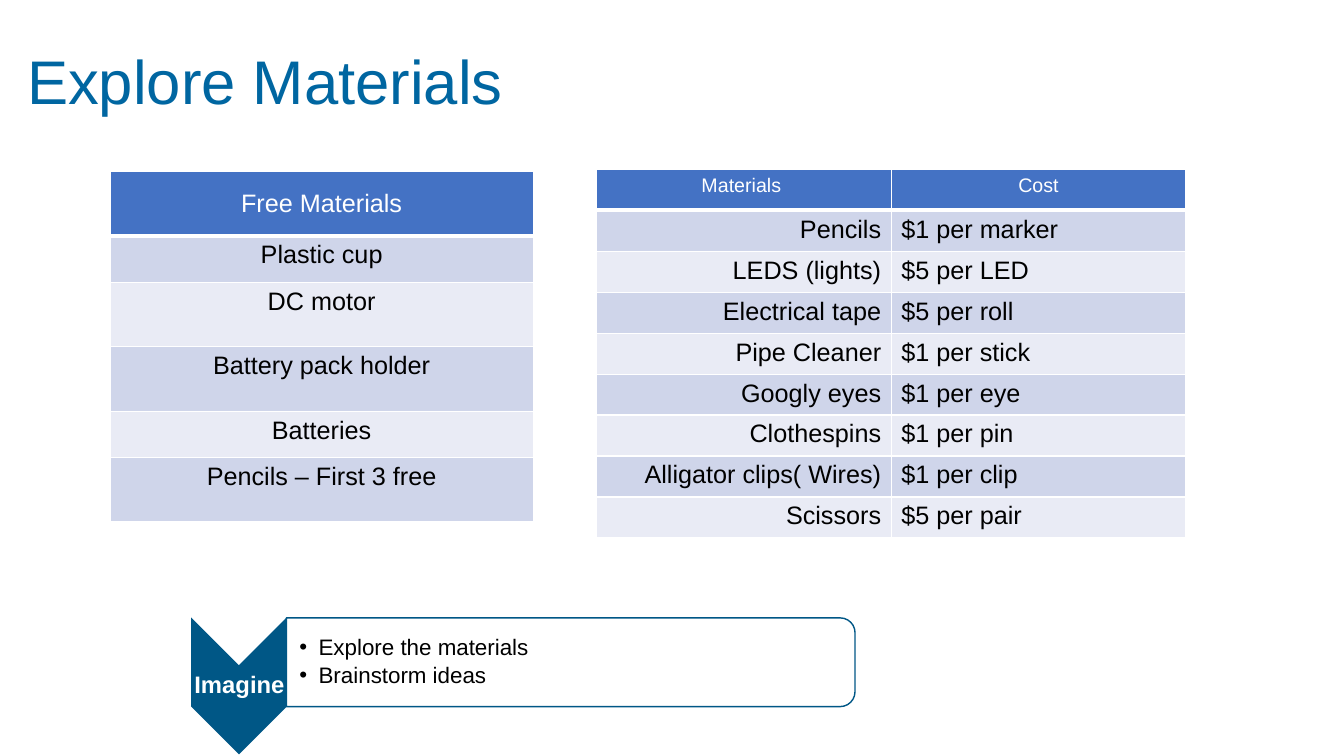
from dataclasses import dataclass

from lxml import etree
from pptx import Presentation
from pptx import util as u
from pptx.dml.color import RGBColor
from pptx.enum import shapes, text
from pptx.oxml import ns

FONT = "Arial"
WHITE, BLACK, TITLE_BLUE, STEP_BLUE = "FFFFFF", "000000", "0066A1", "005786"
HEADER_BLUE, BANDS = "4472C4", ("CFD5EA", "E9EBF5")
LEFT, CENTER, RIGHT = text.PP_ALIGN.LEFT, text.PP_ALIGN.CENTER, text.PP_ALIGN.RIGHT
TOP, MIDDLE = text.MSO_ANCHOR.TOP, text.MSO_ANCHOR.MIDDLE


@dataclass
class MaterialTable:
    left: float
    top: float
    column_width: float
    row_heights: list[float]
    rows: list[tuple[str, ...]]
    aligns: tuple
    header_size: int
    header_anchor: text.MSO_ANCHOR


@dataclass
class StepShape:
    kind: shapes.MSO_SHAPE
    box: tuple[float, float, float, float]
    fill: str
    line: str | None = None
    opacity: int = 100


def color(hex_code: str) -> RGBColor:
    return RGBColor.from_string(hex_code)


def add_xml(parent, tag: str, **attributes: str):
    return etree.SubElement(parent, ns.qn(tag), attributes)


def write(frame, content: str, *, size: int, ink: str = BLACK, bold: bool = False,
          align=LEFT, anchor=TOP, line_spacing: float | None = None,
          space_after: float = 0, bullet: bool = False) -> None:
    """Fill a text frame, one paragraph for each line of content."""
    frame.word_wrap = True
    frame.vertical_anchor = anchor
    frame.text = content
    for paragraph in frame.paragraphs:
        paragraph.alignment = align
        paragraph.space_after = u.Pt(space_after)
        if line_spacing:
            paragraph.line_spacing = line_spacing
        if bullet:
            properties = paragraph._p.get_or_add_pPr()
            indent = u.Inches(0.19)
            properties.set("marL", str(indent))
            properties.set("indent", str(-indent))
            add_xml(properties, "a:buFont", typeface=FONT)
            add_xml(properties, "a:buChar", char="•")
        for run in paragraph.runs:
            run.font.name = FONT
            run.font.size = u.Pt(size)
            run.font.bold = bold
            run.font.color.rgb = color(ink)


def add_text(slide, box: tuple, content: str, *,
             insets: tuple = (0.1, 0.05, 0.1, 0.05), **style) -> None:
    frame = slide.shapes.add_textbox(*map(u.Inches, box)).text_frame
    (frame.margin_left, frame.margin_top,
     frame.margin_right, frame.margin_bottom) = map(u.Inches, insets)
    write(frame, content, anchor=MIDDLE, line_spacing=0.9, **style)


def border_cell(cell, bottom: float) -> None:
    properties = cell._tc.get_or_add_tcPr()
    widths = {"a:lnL": 1, "a:lnR": 1, "a:lnT": 1, "a:lnB": bottom}
    for position, (tag, width) in enumerate(widths.items()):
        edge = etree.Element(ns.qn(tag), w=str(u.Pt(width)))
        add_xml(add_xml(edge, "a:solidFill"), "a:srgbClr", val=WHITE)
        properties.insert(position, edge)


def draw_table(slide, materials: MaterialTable) -> None:
    columns = len(materials.aligns)
    table = slide.shapes.add_table(
        len(materials.rows), columns, u.Inches(materials.left), u.Inches(materials.top),
        u.Inches(materials.column_width * columns),
        u.Inches(sum(materials.row_heights))).table
    for column in table.columns:
        column.width = u.Inches(materials.column_width)
    for row_index, (labels, height) in enumerate(zip(materials.rows, materials.row_heights)):
        table.rows[row_index].height = u.Inches(height)
        header = row_index == 0
        for column_index, label in enumerate(labels):
            cell = table.cell(row_index, column_index)
            cell.fill.solid()
            cell.fill.fore_color.rgb = color(
                HEADER_BLUE if header else BANDS[(row_index - 1) % 2])
            border_cell(cell, bottom=3 if header else 1)
            write(cell.text_frame, label,
                  size=materials.header_size if header else 18,
                  ink=WHITE if header else BLACK,
                  align=CENTER if header else materials.aligns[column_index])
            cell.vertical_anchor = materials.header_anchor if header else TOP


def draw_step_shape(slide, step: StepShape) -> None:
    outline = slide.shapes.add_shape(step.kind, *map(u.Inches, step.box))
    outline.rotation = 90
    outline.shadow.inherit = False
    outline.fill.solid()
    outline.fill.fore_color.rgb = color(step.fill)
    if step.opacity < 100:
        fill_color = outline._element.spPr.find(".//" + ns.qn("a:srgbClr"))
        add_xml(fill_color, "a:alpha", val=str(step.opacity * 1000))
    if step.line:
        outline.line.color.rgb = color(step.line)
        outline.line.width = u.Pt(1)
    else:
        outline.line.fill.background()


TABLES = [
    MaterialTable(
        1.09, 1.7, 4.2, [0.64, 0.46, 0.64, 0.64, 0.46, 0.64],
        [("Free Materials",), ("Plastic cup",), ("DC motor",),
         ("Battery pack holder",), ("Batteries",), ("Pencils – First 3 free",)],
        (CENTER,), 18, MIDDLE),
    MaterialTable(
        5.92, 1.68, 2.92, [3.66 / 9] * 9,
        [("Materials ", "Cost"),
         ("Pencils", "$1 per marker"),
         ("LEDS (lights)", "$5 per LED"),
         ("Electrical tape", "$5 per roll"),
         ("Pipe Cleaner", "$1 per stick"),
         ("Googly eyes", "$1 per eye"),
         ("Clothespins", "$1 per pin"),
         ("Alligator clips( Wires)", "$1 per clip"),
         ("Scissors", "$5 per pair")],
        (RIGHT, LEFT), 14, TOP),
]

STEP_SHAPES = [
    StepShape(shapes.MSO_SHAPE.CHEVRON, (1.69, 6.33, 1.36, 0.95), STEP_BLUE),
    StepShape(shapes.MSO_SHAPE.ROUND_2_SAME_RECTANGLE, (5.22, 3.75, 0.88, 5.64),
              WHITE, line=STEP_BLUE, opacity=90),
]


def main() -> None:
    deck = Presentation()
    deck.slide_width, deck.slide_height = u.Inches(13.33), u.Inches(7.5)
    slide = deck.slides.add_slide(deck.slide_layouts[6])

    # Title
    add_text(slide, (0.17, 0.11, 11.5, 1.45), "Explore Materials",
             size=44, ink=TITLE_BLUE)

    # Free and priced materials
    for materials in TABLES:
        draw_table(slide, materials)

    # Imagine step
    for step in STEP_SHAPES:
        draw_step_shape(slide, step)
    add_text(slide, (1.9, 6.6, 0.95, 0.41), "Imagine", insets=(0.01,) * 4,
             size=17, ink=WHITE, bold=True, align=CENTER)
    add_text(slide, (2.85, 6.17, 5.59, 0.8), "Explore the materials\nBrainstorm ideas",
             insets=(0.12, 0.01, 0.01, 0.01), size=16, space_after=2.4, bullet=True)

    deck.save("out.pptx")


if __name__ == "__main__":
    main()
